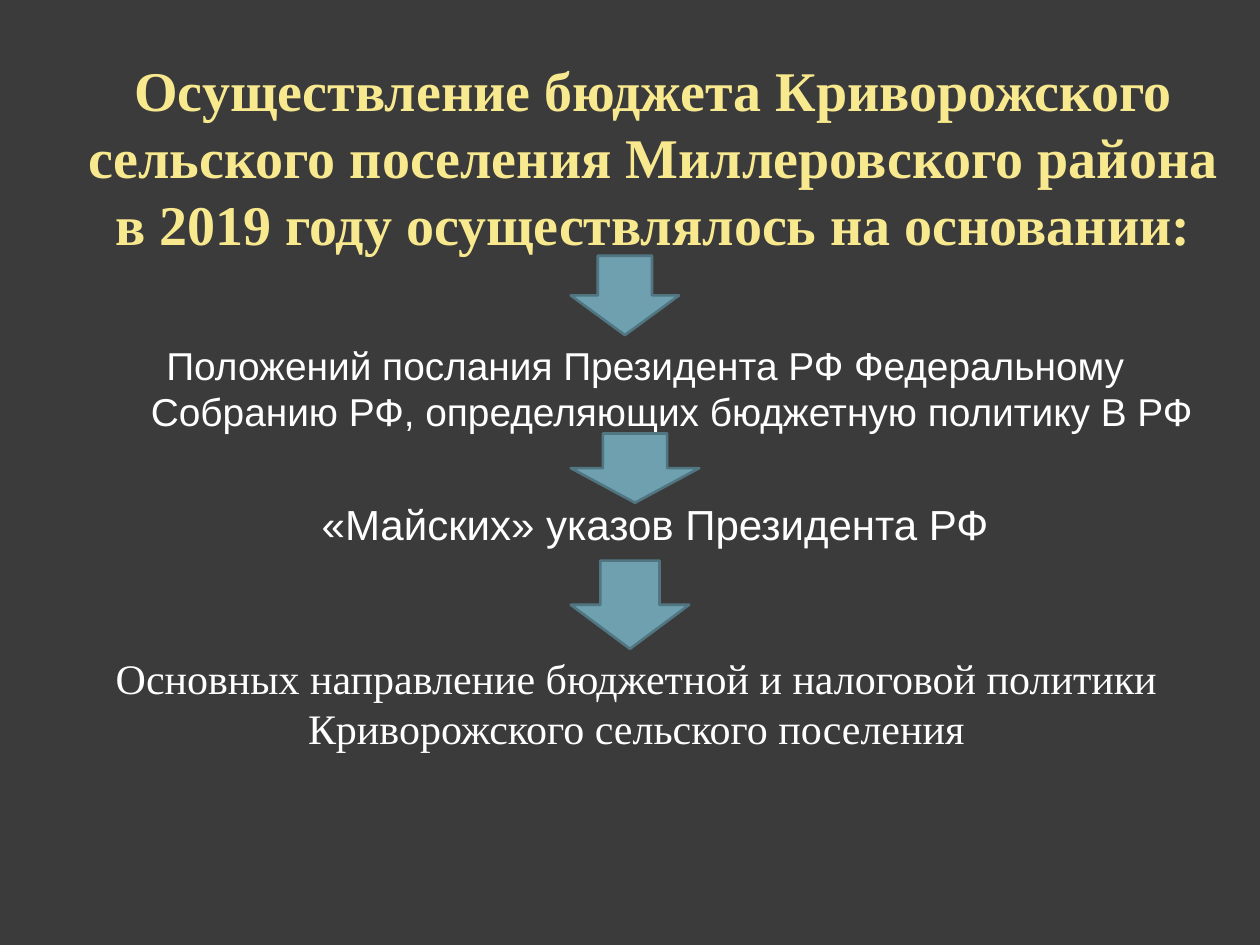
from pptx import Presentation
from pptx.dml.color import RGBColor
from pptx.enum import shapes, text
from pptx.util import Inches, Pt

DARK = RGBColor(0x3B, 0x3B, 0x3B)
CREAM = RGBColor(0xF9, 0xE9, 0x8E)
WHITE = RGBColor(0xFF, 0xFF, 0xFF)
BLUE = RGBColor(0x6E, 0xA0, 0xB0)
EDGE = RGBColor(0x51, 0x76, 0x82)
SERIF, SANS = "Times New Roman", "Arial"

# wording, (left, top, width, height), font, size, colour, bold, hanging indent
TEXTS = [
    ("Осуществление бюджета Криворожского сельского поселения "
     "Миллеровского района в 2019 году осуществлялось на основании:",
     (0.55, 0.39, 9.27, 1.88), SERIF, 32, CREAM, True, False),
    ("Положений послания Президента РФ Федеральному Собранию РФ, "
     "определяющих бюджетную политику В РФ",
     (0.55, 2.66, 9.11, 1), SANS, 22.2, WHITE, False, True),
    ("«Майских» указов Президента РФ",
     (0.78, 3.91, 8.8, 0.97), SANS, 24, WHITE, False, True),
    ("Основных направление бюджетной и налоговой политики "
     "Криворожского сельского поселения",
     (0.55, 5.13, 9, 1.25), SERIF, 24, WHITE, False, False),
]
ARROW_LEFT = 4.53
ARROWS = [(2.03, 0.86, 0.63), (3.44, 1.02, 0.55), (4.45, 0.94, 0.7)]  # top, width, height


def add_text(slide, words, place, font, size, color, bold, hang):
    frame = slide.shapes.add_textbox(*map(Inches, place)).text_frame
    frame.word_wrap = True
    frame.vertical_anchor = text.MSO_ANCHOR.TOP
    frame.margin_top = frame.margin_bottom = Inches(0.05)
    frame.text = words
    para = frame.paragraphs[0]
    para.alignment = text.PP_ALIGN.CENTER
    if hang:
        props = para._p.get_or_add_pPr()
        props.set("marL", str(Inches(0.46)))
        props.set("indent", str(Inches(-0.42)))
    style = para.runs[0].font
    style.name, style.size, style.bold = font, Pt(size), bold
    style.color.rgb = color


def add_arrow(slide, top, width, height):
    arrow = slide.shapes.add_shape(
        shapes.MSO_SHAPE.DOWN_ARROW, *map(Inches, (ARROW_LEFT, top, width, height)))
    arrow.shadow.inherit = False
    arrow.fill.solid()
    arrow.fill.fore_color.rgb = BLUE
    arrow.line.color.rgb = EDGE
    arrow.line.width = Pt(1.5)


def main():
    deck = Presentation()
    deck.slide_width, deck.slide_height = Inches(10), Inches(7.5)
    slide = deck.slides.add_slide(deck.slide_layouts[6])
    slide.background.fill.solid()
    slide.background.fill.fore_color.rgb = DARK
    for item in TEXTS:
        add_text(slide, *item)
    for item in ARROWS:
        add_arrow(slide, *item)
    deck.save("out.pptx")


if __name__ == "__main__":
    main()
